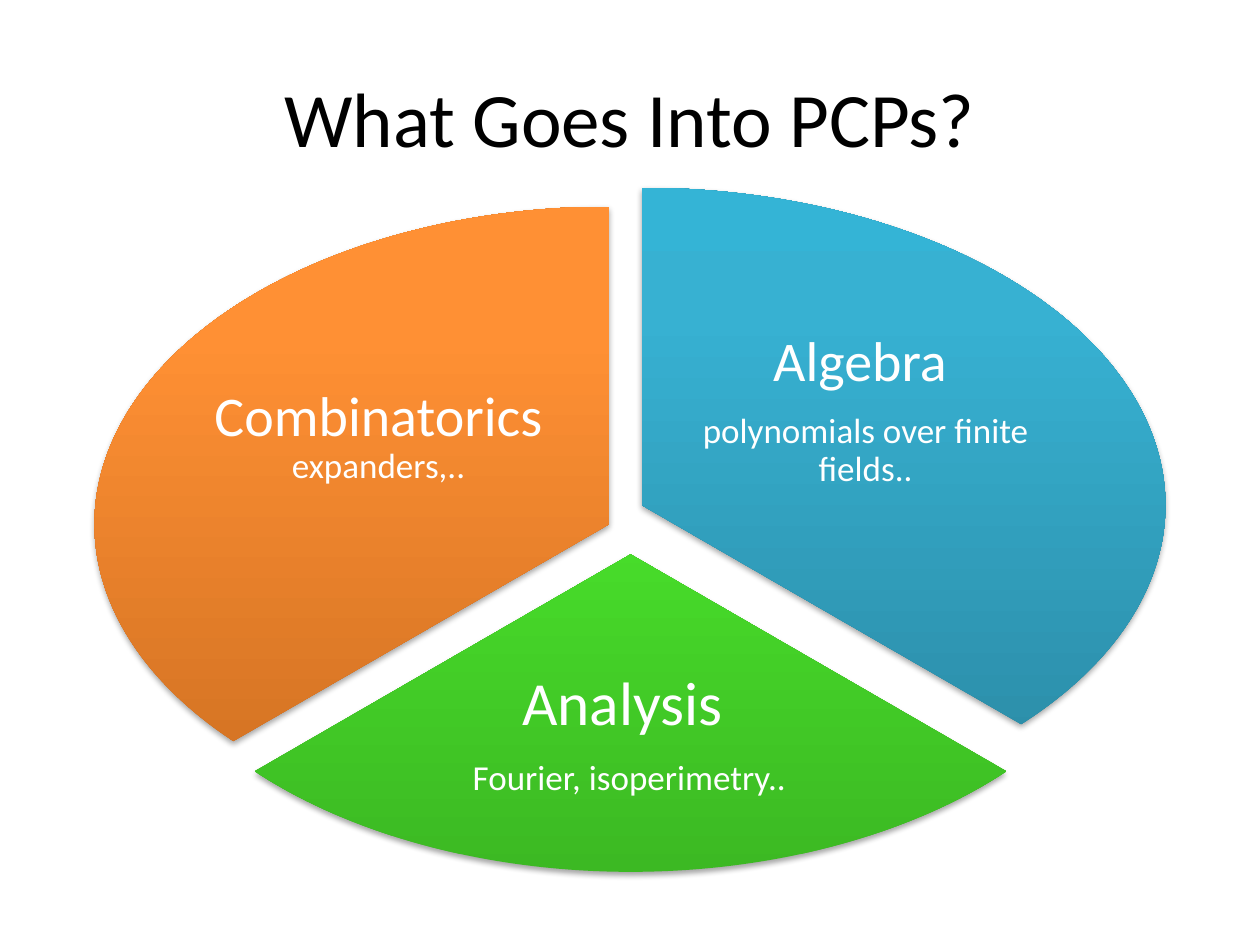
from copy import deepcopy
from lxml.etree import SubElement
from pptx import Presentation
from pptx.dml.color import RGBColor
from pptx.enum.shapes import MSO_SHAPE
from pptx.enum.text import MSO_ANCHOR, PP_ALIGN
from pptx.oxml.ns import qn
from pptx.util import Inches, Pt

FONT = "Calibri"
BLACK = RGBColor(0, 0, 0)
WHITE = RGBColor(255, 255, 255)
BLUES = [RGBColor.from_string(c) for c in ("2A88A2", "37B1D2", "34B4D6")]
GREENS = [RGBColor.from_string(c) for c in ("3CB923", "4EF02E", "4CF52A")]
ORANGES = [RGBColor.from_string(c) for c in ("CC6E20", "FF9034", "FF9136")]
STOPS = (0, 0.8, 1)

WIDE, HIGH = 10, 7.5
TITLE = "What Goes Into PCPs?"

# Each slice: pie box, start and end degrees, colours, text box, inset,
# paragraphs made of (text, size) runs
SLICES = [
    ((0.94, 1.49, 8.31, 5.04), (270, 30), BLUES, (5.46, 2.42, 2.82, 1.68), 0.04,
     [[("Algebra", 32), (" ", 28)], [("polynomials over finite fields..", 20)]]),
    ((0.92, 1.88, 8.17, 5.04), (30, 150), GREENS, (3.15, 5.06, 3.69, 1.56), 0.05,
     [[("Analysis ", 35)], [("Fourier, isoperimetry..", 20)]]),
    ((0.75, 1.64, 8.17, 5.04), (150, 270), ORANGES, (1.62, 2.63, 2.77, 1.68), 0.04,
     [[("Combinatorics", 32), (" expanders,..", 20)]]),
]


def add_text(slide, box, paras, color=WHITE, inset=0.04, line=None, after=None):
    """Add centred text; after is the gap below a paragraph as a share of its line."""
    frame = slide.shapes.add_textbox(*map(Inches, box)).text_frame
    frame.word_wrap = True
    frame.vertical_anchor = MSO_ANCHOR.MIDDLE
    frame.margin_left = frame.margin_right = Inches(inset)
    frame.margin_top = frame.margin_bottom = Inches(inset)
    for i, runs in enumerate(paras):
        para = frame.add_paragraph() if i else frame.paragraphs[0]
        para.alignment = PP_ALIGN.CENTER
        if line:
            para.line_spacing = line
        if after:
            para.space_after = Pt(0)
            gap = para._p.pPr.find(qn("a:spcAft"))
            gap.clear()
            SubElement(gap, qn("a:spcPct"), val=str(round(after * 100000)))
        for text, size in runs:
            run = para.add_run()
            run.text = text
            run.font.name = FONT
            run.font.size = Pt(size)
            run.font.color.rgb = color


def add_shadow(shape):
    shape.shadow.inherit = False
    effects = shape._element.spPr.find(qn("a:effectLst"))
    outer = SubElement(effects, qn("a:outerShdw"), blurRad=str(Pt(3.1)),
                       dist=str(Pt(1.8)), dir="5400000", rotWithShape="0")
    tint = SubElement(outer, qn("a:srgbClr"), val=str(BLACK))
    SubElement(tint, qn("a:alpha"), val="35000")


def add_slice(slide, box, angles, colors):
    pie = slide.shapes.add_shape(MSO_SHAPE.PIE, *map(Inches, box))
    for i, angle in enumerate(angles):
        pie.adjustments[i] = angle * 0.6  # 60000ths of a degree over 100000
    pie.line.fill.background()
    pie.fill.gradient()
    pie.fill.gradient_angle = 90
    stops = pie._element.spPr.find(qn("a:gradFill")).find(qn("a:gsLst"))
    stops.append(deepcopy(stops[-1]))
    for stop, place, color in zip(pie.fill.gradient_stops, STOPS, colors):
        stop.position = place
        stop.color.rgb = color
    add_shadow(pie)


def main():
    deck = Presentation()
    deck.slide_width, deck.slide_height = Inches(WIDE), Inches(HIGH)
    slide = deck.slides.add_slide(deck.slide_layouts[6])
    title_box = (WIDE * 0.05, HIGH * 0.04, WIDE * 0.9, HIGH / 6)
    add_text(slide, title_box, [[(TITLE, 44)]], color=BLACK, inset=0.1)
    for box, angles, colors, label, inset, paras in SLICES:
        add_slice(slide, box, angles, colors)
        add_text(slide, label, paras, inset=inset, line=0.9, after=0.35)
    deck.save("out.pptx")


if __name__ == "__main__":
    main()
